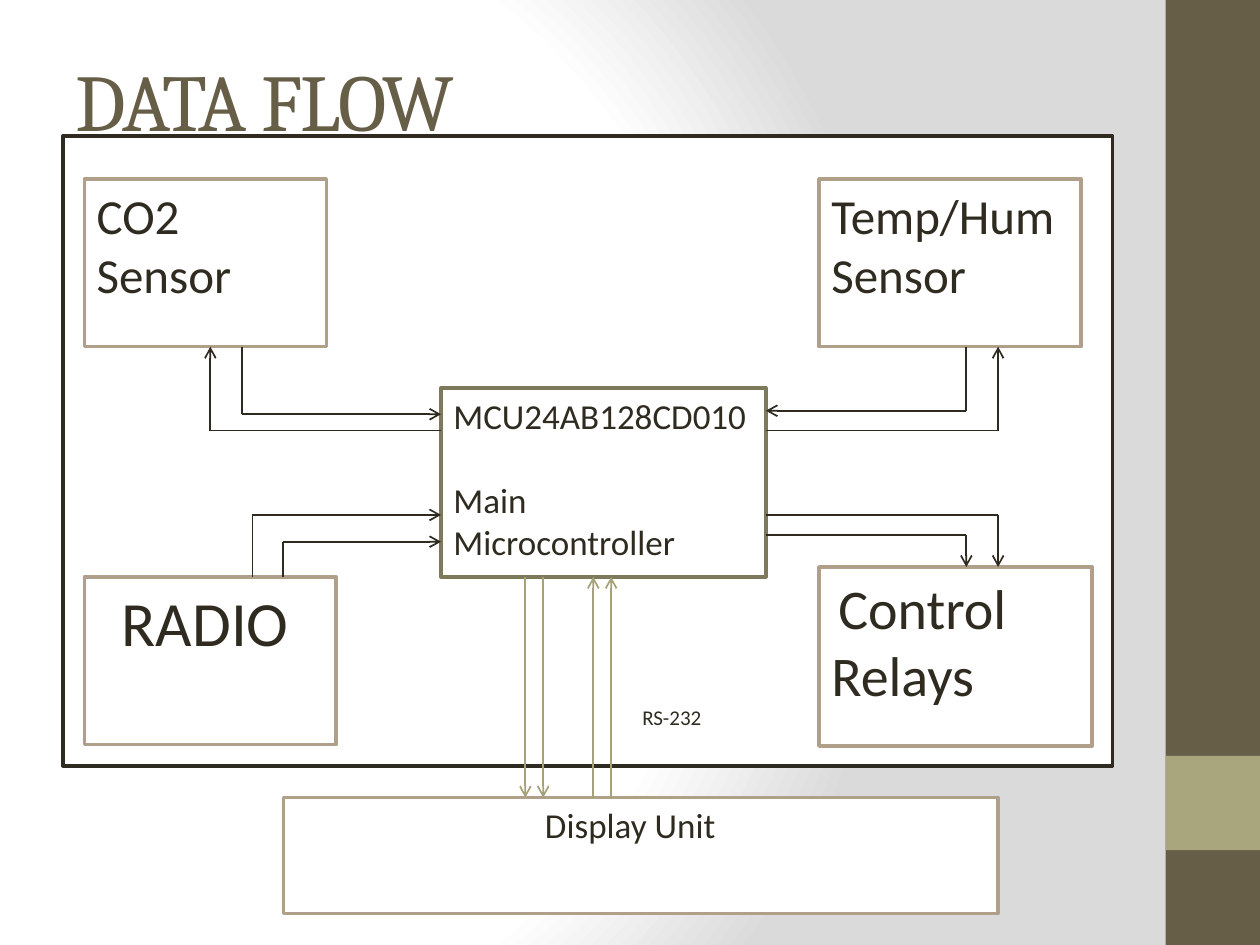
from lxml import etree
from pptx import Presentation
from pptx import util as u
from pptx.dml.color import RGBColor
from pptx.enum import shapes, text
from pptx.oxml import ns

INK, WIRE, BUS = "2F2B20", "2E2A1F", "A6A278"
TAN, OLIVE, BROWN, SAGE = "B1A089", "7D7A5C", "675E47", "A9A57C"
LEFT, CENTER = text.PP_ALIGN.LEFT, text.PP_ALIGN.CENTER


def rgb(value):
    return RGBColor.from_string(value)


def cm(*values):
    return [u.Cm(v) for v in values]


def inside(box, x, y, w, h):
    return box[0] + x, box[1] + y, w, h


def style(p, size, color=INK, font="Calibri", align=LEFT):
    p.font.size, p.font.name = u.Pt(size), font
    p.font.color.rgb = rgb(color)
    p.alignment = align


def add_background(s):
    fill = s.background.fill
    fill.gradient()
    grad = s.background._cSld.find(".//" + ns.qn("a:gradFill"))
    for child in list(grad):
        grad.remove(child)
    stops = etree.SubElement(grad, ns.qn("a:gsLst"))
    for pos, color in ((0, "FFFFFF"), (75, "FFFFFF"), (100, "DADADA")):
        gs = etree.SubElement(stops, ns.qn("a:gs"), pos=str(pos * 1000))
        etree.SubElement(gs, ns.qn("a:srgbClr"), val=color)
    circle = etree.SubElement(grad, ns.qn("a:path"), path="circle")
    etree.SubElement(circle, ns.qn("a:fillToRect"),
                     l="20000", t="50000", r="100000", b="50000")


def add_rect(s, box, fill="FFFFFF", line=None):
    sp = s.shapes.add_shape(shapes.MSO_SHAPE.RECTANGLE, *cm(*box))
    sp.shadow.inherit = False
    sp.fill.solid()
    sp.fill.fore_color.rgb = rgb(fill)
    if line:
        sp.line.color.rgb, sp.line.width = rgb(line), u.Pt(2)
    else:
        sp.line.fill.background()
    return sp


def add_block(s, box, line, lines, size, align=LEFT, right=0.25):
    tf = add_rect(s, box, line=line).text_frame
    tf.word_wrap, tf.vertical_anchor = True, text.MSO_ANCHOR.TOP
    tf.margin_right = u.Cm(right)
    tf.text = "\n".join(lines)
    for p in tf.paragraphs:
        style(p, size, align=align)
    return tf


def add_line(s, start, end, color, arrow):
    line = s.shapes.add_connector(shapes.MSO_CONNECTOR.STRAIGHT, *cm(*start, *end))
    line.line.color.rgb, line.line.width = rgb(color), u.Pt(1)
    if arrow:
        etree.SubElement(line.line._get_or_add_ln(), ns.qn("a:tailEnd"), type="arrow")
    etree.SubElement(line._element.spPr, ns.qn("a:effectLst"))


def add_link(s, device, mcu, dx, dy, to_device):
    x, y = device[0] + dx, mcu[1] + dy
    edge_y = device[1] + (device[3] if device[1] < mcu[1] else 0)
    edge_x = mcu[0] + (mcu[2] if device[0] > mcu[0] else 0)
    points = [(x, edge_y), (x, y), (edge_x, y)]
    if to_device:
        points.reverse()
    add_line(s, points[0], points[1], WIRE, False)
    add_line(s, points[1], points[2], WIRE, True)


def add_bus(s, mcu, display):
    top, bottom = mcu[1] + mcu[3], display[1]
    for dx, down in ((1.7, True), (2.06, True), (3.07, False), (3.43, False)):
        x = mcu[0] + dx
        ends = [(x, top), (x, bottom)]
        add_line(s, *(ends if down else ends[::-1]), BUS, True)


def add_title(s, box):
    sp = s.shapes.title
    sp.left, sp.top, sp.width, sp.height = cm(*box)
    tf = sp.text_frame
    tf.text = "DATA FLOW"
    tf.vertical_anchor = text.MSO_ANCHOR.MIDDLE
    p = tf.paragraphs[0]
    style(p, 46, BROWN, "Cambria")
    p.runs[0]._r.get_or_add_rPr().set("spc", "-100")


def add_sidebar(s, box):
    add_rect(s, box, BROWN)
    add_rect(s, inside(box, 0, 15.24, box[2], box[2]), SAGE)


def add_label(s, box, caption):
    tf = s.shapes.add_textbox(*cm(*box)).text_frame
    tf.word_wrap = True
    tf.text = caption
    style(tf.paragraphs[0], 12)


def add_diagram(s, frame):
    mcu = inside(frame, 7.62, 5.08, 6.55, 3.81)
    co2 = inside(frame, 0.43, 0.87, 4.88, 3.38)
    temp = inside(frame, 15.24, 0.87, 5.28, 3.38)
    radio = inside(frame, 0.43, 8.89, 5.08, 3.38)
    relays = inside(frame, 15.24, 8.69, 5.51, 3.61)
    display = inside(frame, 4.45, 13.34, 14.4, 2.34)

    add_rect(s, frame, line=INK)
    tf = add_block(s, mcu, OLIVE, ["MCU24AB128CD010", "Main Microcontroller"], 20)
    tf.paragraphs[1].space_before = u.Pt(24)
    add_block(s, co2, TAN, ["CO2 Sensor"], 28)
    add_block(s, temp, TAN, ["Temp/Hum Sensor"], 28)
    add_block(s, radio, TAN, ["RADIO"], 36, CENTER, 0.45)
    tf = add_block(s, relays, TAN, ["Control Relays"], 32)
    tf.paragraphs[0]._p.get_or_add_pPr().set("indent", str(u.Cm(0.14)))
    add_block(s, display, TAN, ["Display Unit"], 20, CENTER, 0.68)

    for device, dx, dy, to_device in (
        (co2, 3.18, 0.53, False), (co2, 2.54, 0.86, True),
        (temp, 2.97, 0.46, False), (temp, 3.61, 0.86, True),
        (radio, 4.01, 3.1, False), (radio, 3.39, 2.56, False),
        (relays, 2.97, 2.97, True), (relays, 3.61, 2.56, True),
    ):
        add_link(s, device, mcu, dx, dy, to_device)
    add_bus(s, mcu, display)
    add_label(s, inside(frame, 11.43, 11.33, 2.74, 0.76), "RS-232")


def main():
    prs = Presentation()
    prs.slide_width, prs.slide_height = cm(25.4, 19.05)
    s = prs.slides.add_slide(prs.slide_layouts[5])
    add_background(s)
    add_sidebar(s, (23.5, 0, 1.9, 19.05))
    add_title(s, (1.27, 0.41, 21.16, 3.18))
    add_diagram(s, (1.27, 2.74, 21.16, 12.7))
    prs.save("out.pptx")


if __name__ == "__main__":
    main()
